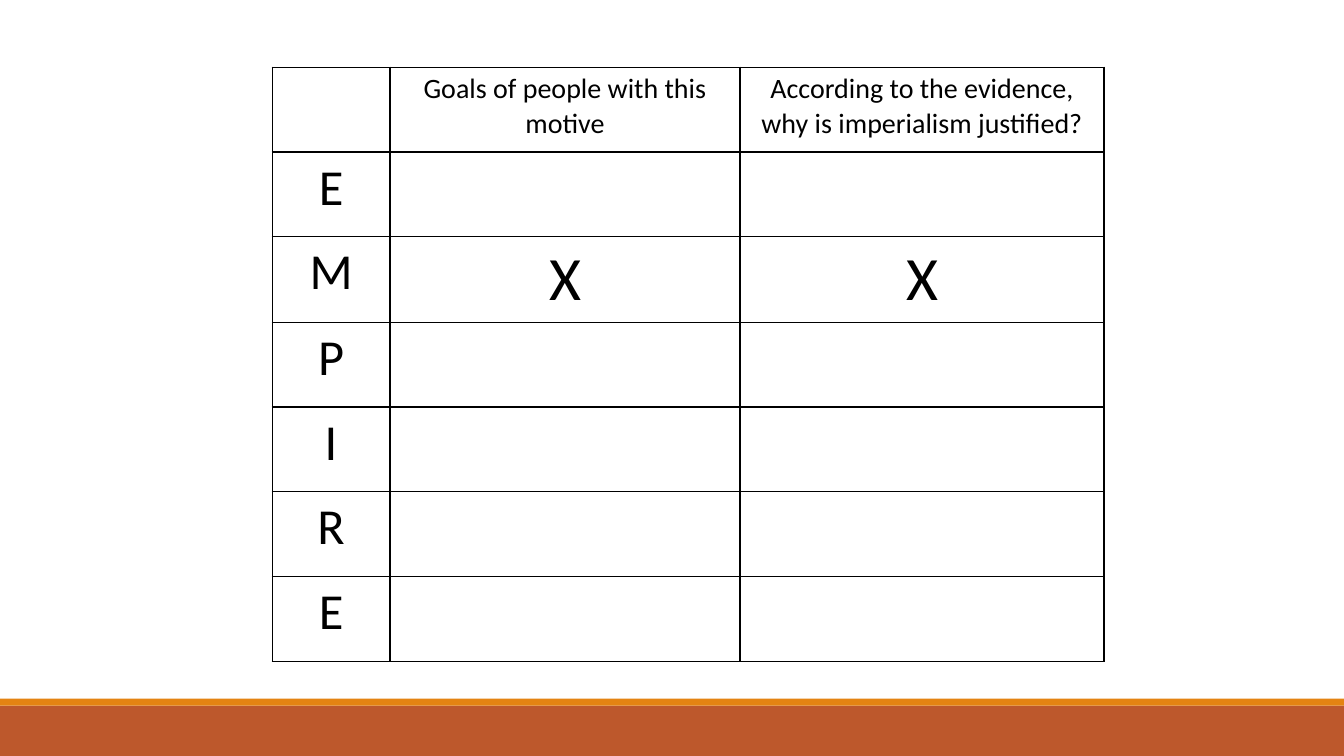
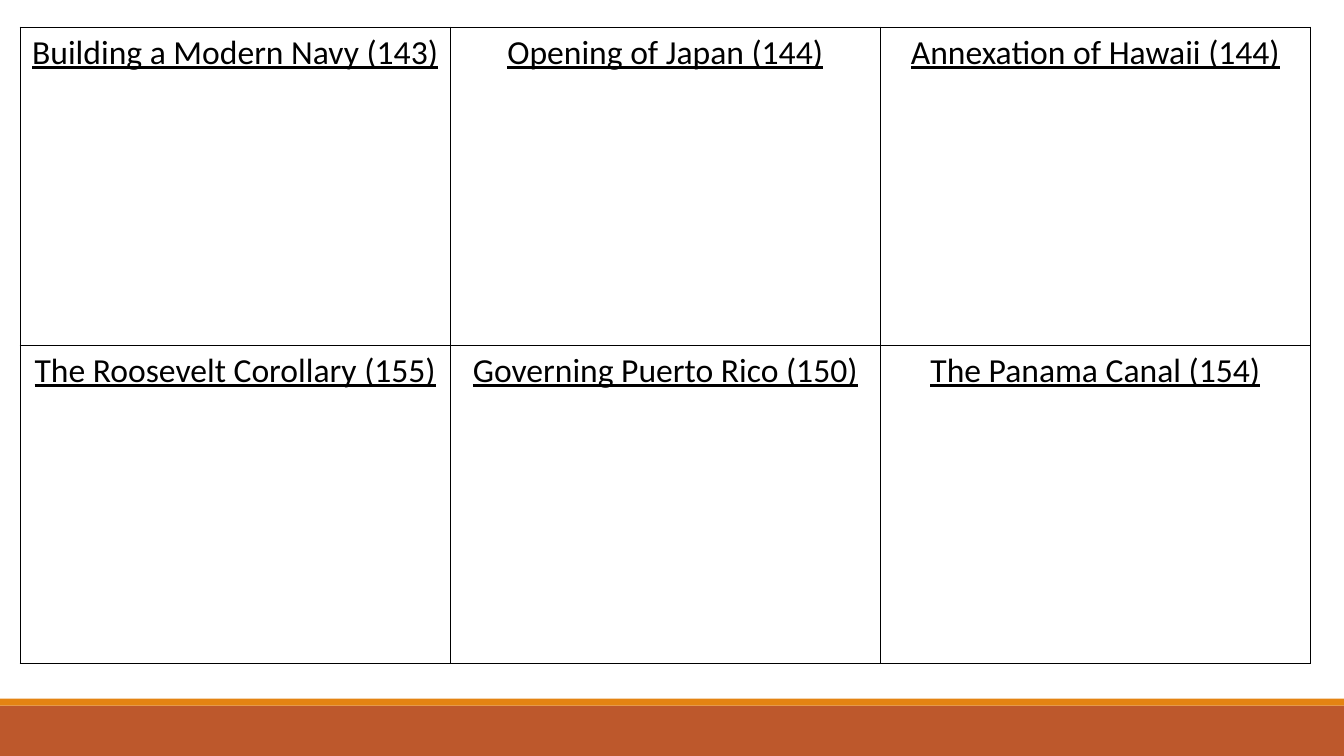
from lxml.etree import SubElement
from pptx import Presentation
from pptx.dml.color import RGBColor
from pptx.enum.shapes import MSO_SHAPE
from pptx.enum.text import PP_ALIGN
from pptx.oxml.ns import qn
from pptx.util import Pt

COLORS = {"text": "000000", "border": "000000", "band": "BD582C", "strip": "E48312"}
FONT = "Calibri"
SLIDE_WIDTH, SLIDE_HEIGHT = 960, 540
BAND_HEIGHT, STRIP_HEIGHT = 36, 5
BLANK_LAYOUT = 6

HEADER = {"size": Pt(20)}
LETTER = {"size": Pt(36)}
MARK = {"size": Pt(44)}
TOPIC = {"size": Pt(24), "underline": True}


class Deck:
    def __init__(self):
        self.prs = Presentation()
        self.prs.slide_width = Pt(SLIDE_WIDTH)
        self.prs.slide_height = Pt(SLIDE_HEIGHT)
        self.slide = None

    def new_slide(self):
        self.slide = self.prs.slides.add_slide(self.prs.slide_layouts[BLANK_LAYOUT])
        band_top = SLIDE_HEIGHT - BAND_HEIGHT
        self.band(band_top, BAND_HEIGHT, "band")
        self.band(band_top - STRIP_HEIGHT, STRIP_HEIGHT, "strip")

    def band(self, top, height, color):
        bar = self.slide.shapes.add_shape(
            MSO_SHAPE.RECTANGLE, 0, Pt(top), Pt(SLIDE_WIDTH), Pt(height))
        bar.shadow.inherit = False
        bar.fill.solid()
        bar.fill.fore_color.rgb = RGBColor.from_string(COLORS[color])
        bar.line.fill.background()

    def grid(self, left, top, col_widths, row_height, rows):
        """Add a bordered table; each entry of rows is (text, format) or None."""
        table = self.slide.shapes.add_table(
            len(rows), len(col_widths), Pt(left), Pt(top),
            Pt(sum(col_widths)), Pt(row_height * len(rows))).table
        table.first_row = table.horz_banding = False
        for column, width in zip(table.columns, col_widths):
            column.width = Pt(width)
        for r, entries in enumerate(rows):
            table.rows[r].height = Pt(row_height)
            for c, entry in enumerate(entries):
                cell = table.cell(r, c)
                self.border(cell)
                cell.fill.background()
                if entry:
                    self.cell_text(cell, *entry)

    def border(self, cell):
        properties = cell._tc.get_or_add_tcPr()
        for side in ("a:lnL", "a:lnR", "a:lnT", "a:lnB"):
            line = SubElement(properties, qn(side), w=str(Pt(1)))
            fill = SubElement(line, qn("a:solidFill"))
            SubElement(fill, qn("a:srgbClr"), val=COLORS["border"])

    def cell_text(self, cell, text, style):
        paragraph = cell.text_frame.paragraphs[0]
        paragraph.alignment = PP_ALIGN.CENTER
        run = paragraph.add_run()
        run.text = text
        run.font.color.rgb = RGBColor.from_string(COLORS["text"])
        for name, value in {"name": FONT, **style}.items():
            setattr(run.font, name, value)


def motives_slide(deck):
    deck.new_slide()
    header = [None,
              ("Goals of people with this motive", HEADER),
              ("According to the evidence, why is imperialism justified?", HEADER)]
    motives = [[(letter, LETTER)] + [("X", MARK) if letter == "M" else None] * 2
               for letter in "EMPIRE"]
    deck.grid(194.4, 48, [84.2, 250, 260], 60.6, [header] + motives)


def events_slide(deck):
    deck.new_slide()
    events = [
        ["Building a Modern Navy (143)", "Opening of Japan (144)",
         "Annexation of Hawaii (144)"],
        ["The Roosevelt Corollary (155)", "Governing Puerto Rico (150)",
         "The Panama Canal (154)"],
    ]
    deck.grid(14.4, 19.4, [307.2] * 3, 227.2,
              [[(event, TOPIC) for event in row] for row in events])


def main():
    deck = Deck()
    motives_slide(deck)
    events_slide(deck)
    deck.prs.save("out.pptx")


if __name__ == "__main__":
    main()
